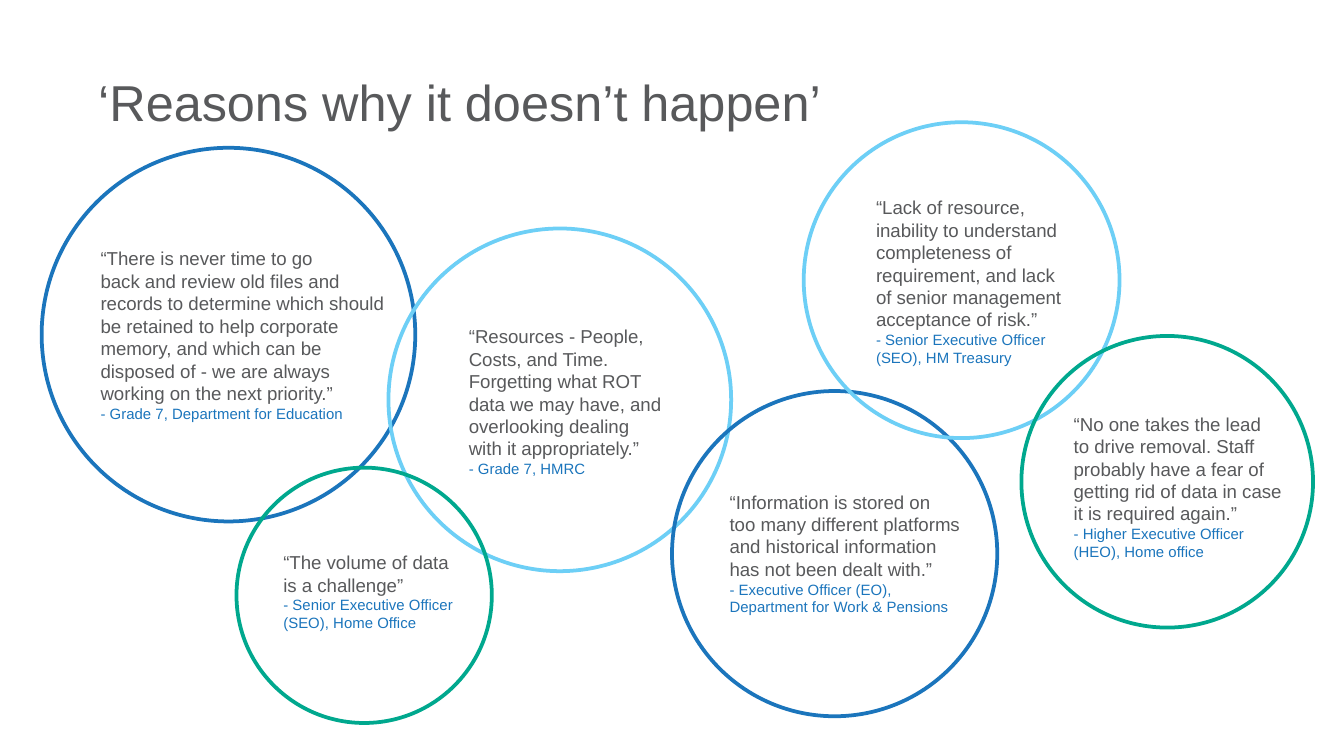
import pptx
import pptx.util
import pptx.dml.color
import pptx.enum.shapes
import pptx.enum.text
import pptx.oxml.ns
from dataclasses import dataclass
from lxml import etree

Inches = pptx.util.Inches
Pt = pptx.util.Pt
RGB = pptx.dml.color.RGBColor.from_string


@dataclass(frozen=True)
class Theme:
    font: str = "Arial"
    ink: str = "58595B"
    blue: str = "1B75BC"
    sky: str = "6DCFF6"
    green: str = "00A88E"
    title_size: int = 27
    quote_size: int = 10
    source_size: int = 8
    ring_width: int = 2


THEME = Theme()

# Ring (left, top, diameter), ring colour,
# wording offset in the ring (left, top) and size (width, height), quote, source
QUOTES = [
    ((0.31, 1.1, 2.78), THEME.blue, (0.34, 0.69, 2.33, 1.41),
     "“There is never time to go \nback and review old files and records to determine "
     "which should be retained to help corporate memory, and which can be \n"
     "disposed of - we are always \nworking on the next priority.”",
     "- Grade 7, Department for Education"),
    ((2.89, 1.7, 2.55), THEME.sky, (0.5, 0.67, 1.67, 1.25),
     "“Resources - People, Costs, and Time. Forgetting what ROT data we may have, "
     "and overlooking dealing with it appropriately.”",
     "- Grade 7, HMRC"),
    ((1.76, 3.48, 1.9), THEME.green, (0.25, 0.57, 1.5, 0.71),
     "“The volume of data is a challenge”",
     "- Senior Executive Officer (SEO), Home Office"),
    ((5, 2.91, 2.42), THEME.blue, (0.33, 0.69, 1.91, 1.04),
     "“Information is stored on too many different platforms and historical "
     "information has not been dealt with.”",
     "- Executive Officer (EO), Department for Work & Pensions"),
    ((5.98, 0.91, 2.35), THEME.sky, (0.44, 0.5, 1.67, 1.38),
     "“Lack of resource, inability to understand completeness of requirement, "
     "and lack of senior management acceptance of risk.”",
     "- Senior Executive Officer (SEO), HM Treasury"),
    ((7.6, 2.5, 2.17), THEME.green, (0.29, 0.52, 1.81, 1.21),
     "“No one takes the lead \nto drive removal. Staff probably have a fear of "
     "getting rid of data in case it is required again.”",
     "- Higher Executive Officer (HEO), Home office"),
]


def set_all(target, values):
    for name, value in values.items():
        setattr(target, name, value)


def write(paragraph, wording, size, colour):
    paragraph.text = wording
    for run in paragraph.runs:
        set_all(run.font, {"name": THEME.font, "size": Pt(size)})
        run.font.color.rgb = RGB(colour)
    # Line breaks take the text size too, so that line heights stay even
    for line_break in paragraph._p.findall(pptx.oxml.ns.qn("a:br")):
        etree.SubElement(line_break, pptx.oxml.ns.qn("a:rPr"), sz=str(size * 100))


def add_wording(slide, box, margins, anchor):
    frame = slide.shapes.add_textbox(*map(Inches, box)).text_frame
    side, end = map(Inches, margins)
    set_all(frame, {"word_wrap": True, "vertical_anchor": anchor,
                    "margin_left": side, "margin_right": side,
                    "margin_top": end, "margin_bottom": end})
    return frame


def add_title(slide, box, wording):
    frame = add_wording(slide, box, (0.04, 0.02), pptx.enum.text.MSO_ANCHOR.MIDDLE)
    heading = frame.paragraphs[0]
    heading.line_spacing = 1.15
    write(heading, wording, THEME.title_size, THEME.ink)


def add_quote(slide, ring_box, colour, inset, quote, source):
    left, top, diameter = ring_box
    dx, dy, width, height = inset

    # Quote with its source
    frame = add_wording(slide, (left + dx, top + dy, width, height), (0.1, 0.05),
                        pptx.enum.text.MSO_ANCHOR.TOP)
    write(frame.paragraphs[0], quote, THEME.quote_size, THEME.ink)
    write(frame.add_paragraph(), source, THEME.source_size, THEME.blue)

    # Ring around the quote
    ring = slide.shapes.add_shape(pptx.enum.shapes.MSO_SHAPE.OVAL,
                                  *map(Inches, (left, top, diameter, diameter)))
    ring.shadow.inherit = False
    ring.fill.background()
    ring.line.color.rgb = RGB(colour)
    ring.line.width = Pt(THEME.ring_width)


def main():
    deck = pptx.Presentation()
    # Widescreen, 16 to 9
    slide_width = Inches(10)
    set_all(deck, {"slide_width": slide_width, "slide_height": slide_width * 9 // 16})
    slide = deck.slides.add_slide(deck.slide_layouts[6])
    add_title(slide, (0.69, 0.32, 8.62, 0.8), "‘Reasons why it doesn’t happen’")
    for entry in QUOTES:
        add_quote(slide, *entry)
    deck.save("out.pptx")


if __name__ == "__main__":
    main()
